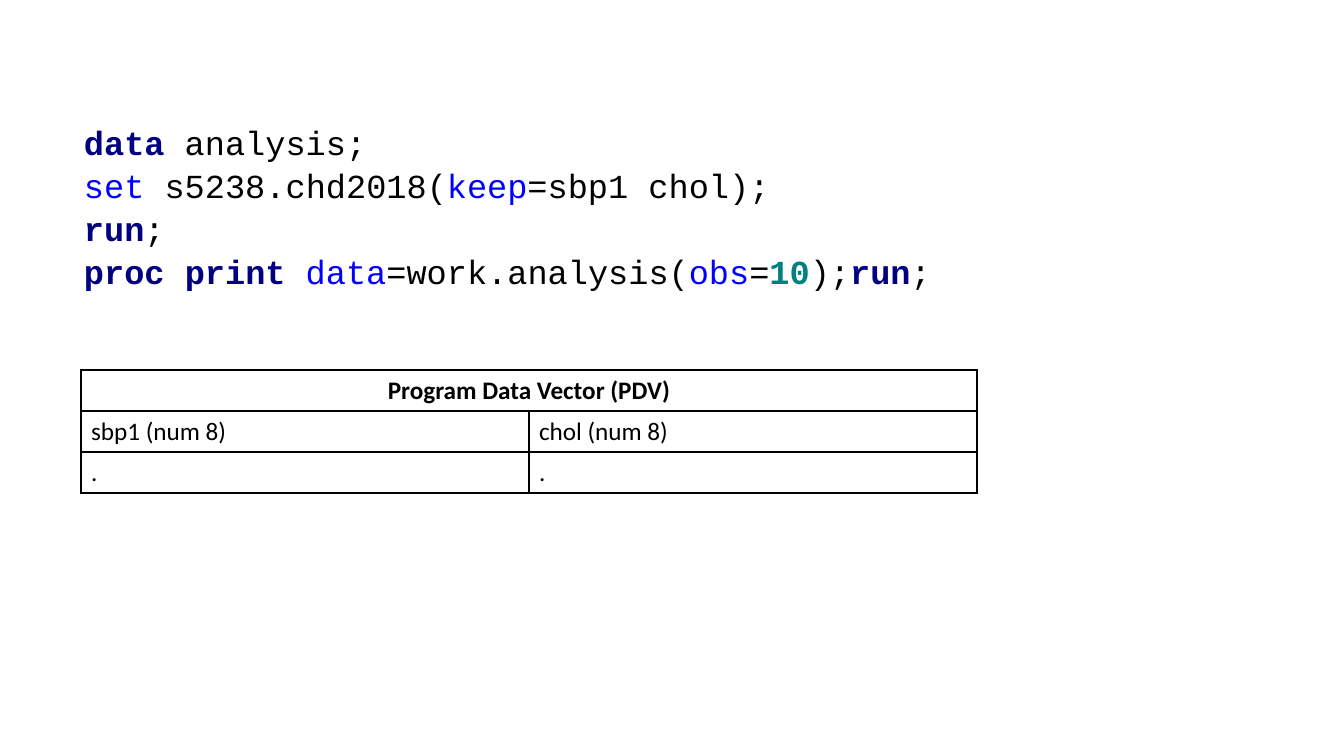
from lxml import etree
from pptx import Presentation
from pptx.dml.color import RGBColor
from pptx.enum.text import MSO_AUTO_SIZE, PP_ALIGN
from pptx.oxml.ns import qn
from pptx.util import Pt

EMU_PER_PX = 914400 / 100.8
BLACK = RGBColor(0x00, 0x00, 0x00)
NAVY = RGBColor(0x00, 0x00, 0x80)
BLUE = RGBColor(0x00, 0x00, 0xFF)
TEAL = RGBColor(0x00, 0x80, 0x80)
CENTER = PP_ALIGN.CENTER
GROW = MSO_AUTO_SIZE.SHAPE_TO_FIT_TEXT
CODE_FONT = "Courier New"
TABLE_FONT = "Calibri"
STEP = {"color": NAVY, "bold": True}
KEYWORD = {"color": BLUE}
NUMBER = {"color": TEAL, "bold": True}
PLAIN = {}

CODE_LINES = [
    [("data", STEP), (" analysis;", PLAIN)],
    [("set", KEYWORD), (" s5238.chd2018(", PLAIN), ("keep", KEYWORD), ("=sbp1 chol);", PLAIN)],
    [("run", STEP), (";", PLAIN)],
    [("proc print ", STEP), ("data", KEYWORD), ("=work.analysis(", PLAIN), ("obs", KEYWORD),
     ("=", PLAIN), ("10", NUMBER), (");", PLAIN), ("run", STEP), (";", PLAIN)],
]
VECTOR_TITLE = "Program Data Vector (PDV)"
VECTOR_ROWS = [["sbp1 (num 8)", "chol (num 8)"], [".", "."]]


def px(length):
    """Turn pixels into EMU."""
    return round(length * EMU_PER_PX)


def add_text(paragraph, text, font=TABLE_FONT, size=18, color=BLACK, bold=False):
    """Append one formatted run to a paragraph."""
    run = paragraph.add_run()
    run.text = text
    run.font.name = font
    run.font.size = Pt(size)
    run.font.color.rgb = color
    run.font.bold = bold


def format_cell(cell):
    """Clear the fill of a cell and give it thin black borders."""
    properties = cell._tc.get_or_add_tcPr()
    for side in ("a:lnL", "a:lnR", "a:lnT", "a:lnB"):
        line = etree.SubElement(properties, qn(side), w=str(Pt(1)))
        fill = etree.SubElement(line, qn("a:solidFill"))
        etree.SubElement(fill, qn("a:srgbClr"), val=str(BLACK))
    cell.fill.background()


def add_code(slide, left, top, width, height):
    """Place the highlighted program."""
    box = slide.shapes.add_textbox(px(left), px(top), px(width), px(height))
    frame = box.text_frame
    frame.word_wrap = True
    frame.auto_size = GROW
    for index, line in enumerate(CODE_LINES):
        paragraph = frame.add_paragraph() if index else frame.paragraphs[0]
        paragraph.line_spacing = 1.07
        for text, style in line:
            add_text(paragraph, text, font=CODE_FONT, size=24, **style)


def add_vector_table(slide, left, top, width, height):
    """Place the data vector table under its merged heading."""
    row_count, column_count = len(VECTOR_ROWS) + 1, len(VECTOR_ROWS[0])
    table = slide.shapes.add_table(
        row_count, column_count, px(left), px(top), px(width), px(height)).table
    for cell in table.iter_cells():
        format_cell(cell)
    heading = table.cell(0, 0)
    heading.merge(table.cell(0, column_count - 1))
    paragraph = heading.text_frame.paragraphs[0]
    paragraph.alignment = CENTER
    add_text(paragraph, VECTOR_TITLE, bold=True)
    for row, values in enumerate(VECTOR_ROWS, start=1):
        for column, value in enumerate(values):
            add_text(table.cell(row, column).text_frame.paragraphs[0], value)


def main():
    """Build and save the slide."""
    presentation = Presentation()
    presentation.slide_width, presentation.slide_height = px(1344), px(756)
    slide = presentation.slides.add_slide(presentation.slide_layouts[6])
    add_code(slide, 74, 114, 1152, 173)
    add_vector_table(slide, 81, 370, 896, 123)
    presentation.save("out.pptx")


if __name__ == "__main__":
    main()
